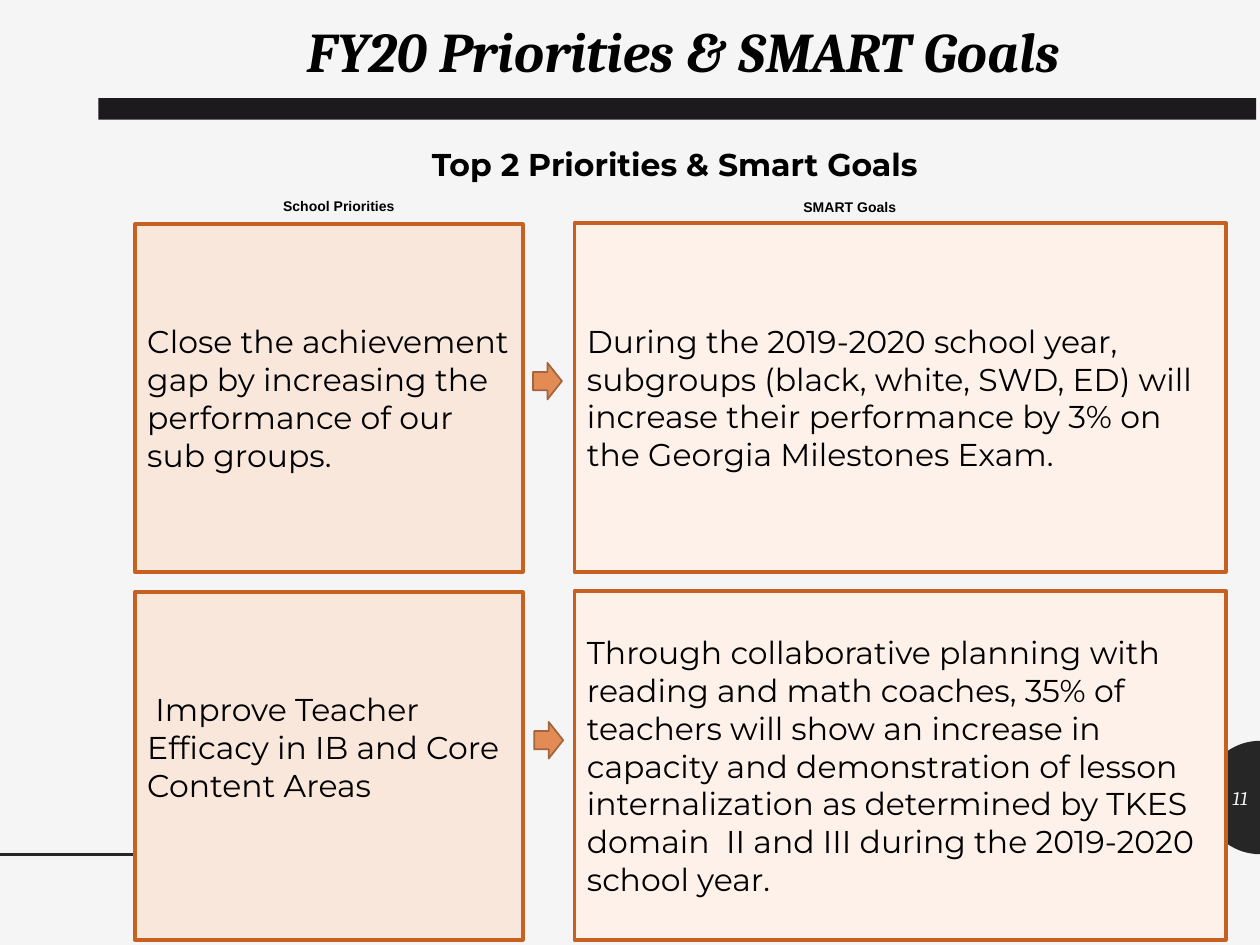
from math import cos, pi, sin
from lxml import etree
from pptx import Presentation
from pptx.dml.color import RGBColor
from pptx.enum.shapes import MSO_CONNECTOR, MSO_SHAPE
from pptx.enum.text import MSO_ANCHOR, PP_ALIGN
from pptx.oxml.ns import qn
from pptx.util import Inches, Pt

HEADS = [
    ("FY20 Priorities & SMART Goals", (0.96, 0.08, 8.93, 0.64),
     dict(size=32, face="Cambria", bold=True, ital=True)),
    ("Top 2 Priorities & Smart Goals ", (0.78, 1.1, 9.22, 0.71), dict(bold=True)),
    ("School Priorities", (2.14, 1.52, 1.1, 0.24), dict(size=8, face="Arial", bold=True)),
    ("SMART Goals", (6.1, 1.53, 1.29, 0.24), dict(size=8, face="Arial", bold=True)),
]
ROWS = [
    dict(top=1.77, arrow=(4.23, 2.88), low=0.05,
         aim="Close the achievement gap by increasing the performance of our sub groups.",
         goal="During the 2019-2020 school year, subgroups (black, white, SWD, ED) will "
              "increase their performance by 3% on the Georgia Milestones Exam."),
    dict(top=4.69, arrow=(4.24, 5.73), low=0.35,
         aim=" Improve Teacher Efficacy in IB and Core Content Areas",
         goal="Through collaborative planning with reading and math coaches, 35% of teachers "
              "will show an increase in capacity and demonstration of lesson internalization "
              "as determined by TKES domain  II and III during the 2019-2020 school year."),
]
INK, EDGE = "262626", "C76121"

deck = Presentation()
deck.slide_width, deck.slide_height = Inches(10), Inches(7.5)
slide = deck.slides.add_slide(deck.slide_layouts[6])
items = slide.shapes


def color(code):
    return RGBColor.from_string(code)


def paint(shape, fill, line=None, width=2):
    shape.shadow.inherit = False
    shape.fill.solid()
    shape.fill.fore_color.rgb = color(fill)
    if line:
        shape.line.color.rgb = color(line)
        shape.line.width = Pt(width)
    else:
        shape.line.fill.background()
    return shape


def block(kind, at, fill, line=None, width=2):
    return paint(items.add_shape(kind, *map(Inches, at)), fill, line, width)


def write(shape, words, size=18, face="Montserrat", ink="000000", bold=False,
          ital=False, align=PP_ALIGN.LEFT, anchor=MSO_ANCHOR.MIDDLE, low=0.05):
    frame = shape.text_frame
    frame.word_wrap = True
    frame.vertical_anchor = anchor
    frame.margin_bottom = Inches(low)
    para = frame.paragraphs[0]
    para.alignment = align
    run = para.add_run()
    run.text = words
    font = run.font
    font.size, font.name, font.bold, font.italic = Pt(size), face, bold, ital
    font.color.rgb = color(ink)


def label(words, at, **form):
    write(items.add_textbox(*map(Inches, at)), words, **form)


slide.background.fill.solid()
slide.background.fill.fore_color.rgb = color("F5F5F5")

mid, rad, steps = 6.33, 0.45, 40
arc = [(10 - rad * sin(pi * i / steps), mid - rad * cos(pi * i / steps))
       for i in range(steps + 1)]
pen = items.build_freeform(*map(Inches, arc[0]), scale=1.0)
pen.add_line_segments([tuple(map(Inches, dot)) for dot in arc[1:]], close=True)
paint(pen.convert_to_shape(), INK)

rule = items.add_connector(MSO_CONNECTOR.STRAIGHT, *map(Inches, (0, 6.78, 3.69, 6.78)))
rule.line.color.rgb = color(INK)
rule.line.width = Pt(2)
etree.SubElement(rule._element.spPr, qn("a:effectLst"))

block(MSO_SHAPE.RECTANGLE, (0.78, 0.78, 9.19, 0.17), "1D1A1D")
for words, at, form in HEADS:
    label(words, at, align=PP_ALIGN.CENTER, anchor=MSO_ANCHOR.TOP, **form)

for row in ROWS:
    top = row["top"]
    goal = block(MSO_SHAPE.RECTANGLE, (4.56, top, 5.17, 2.77), "FDF1E9", EDGE)
    write(goal, row["goal"])
    aim = block(MSO_SHAPE.RECTANGLE, (1.07, top + 0.01, 3.08, 2.76), "F9E7DC", EDGE)
    write(aim, row["aim"], low=row["low"])
    block(MSO_SHAPE.RIGHT_ARROW, (*row["arrow"], 0.23, 0.29), "E28B55", "A4653E", 1)

label("11", (9.55, 6.13, 0.45, 0.4), size=11, face="Cambria", ink="F5F5F5",
      ital=True, align=PP_ALIGN.RIGHT)

deck.save("out.pptx")
